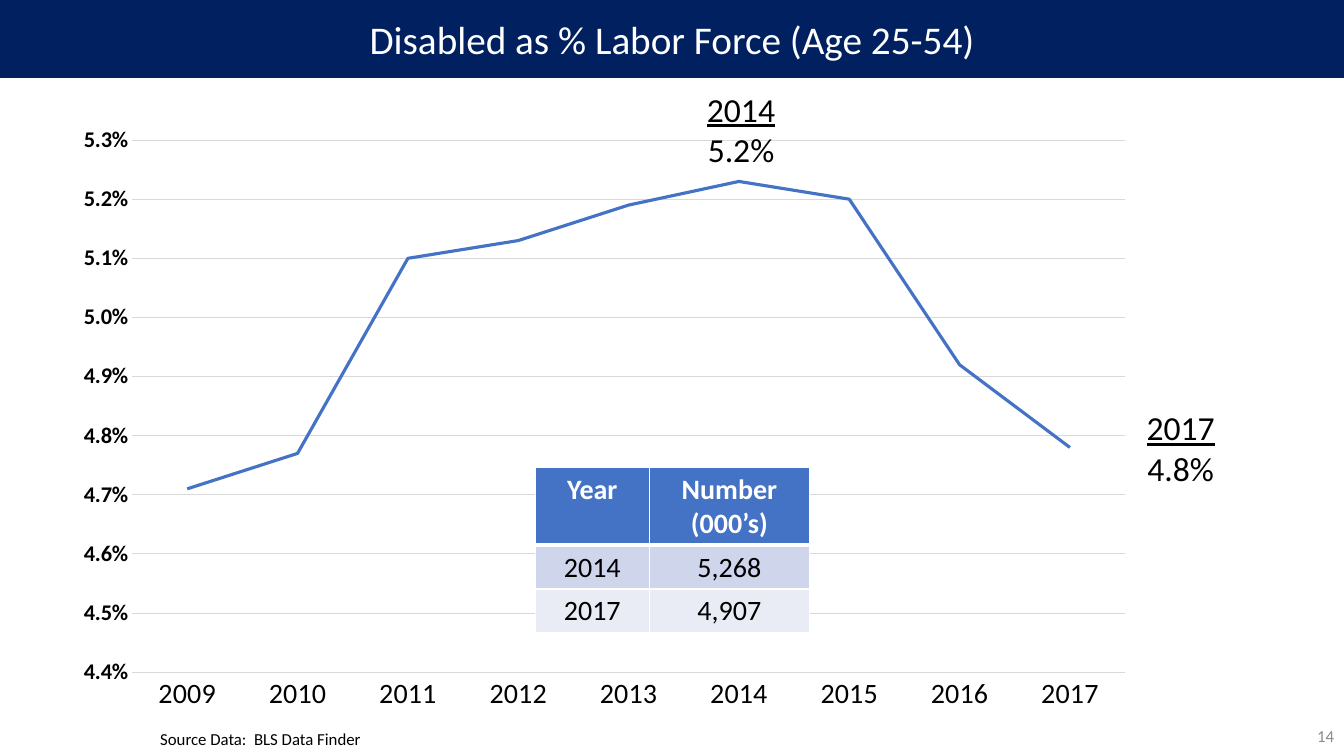
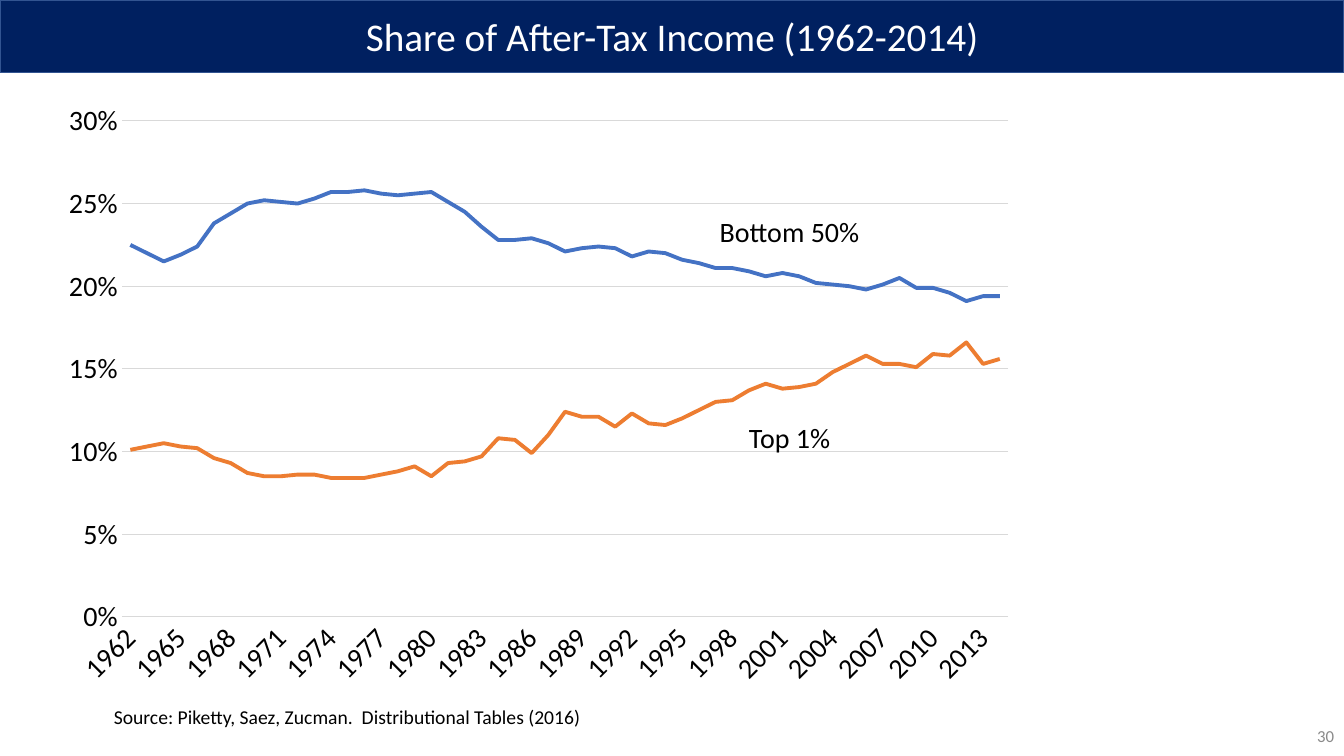
from dataclasses import dataclass

from lxml import etree
from pptx import Presentation
from pptx.chart.data import CategoryChartData
from pptx.dml.color import RGBColor
from pptx.enum.chart import XL_CHART_TYPE as ChartType, XL_TICK_MARK as Tick
from pptx.enum.shapes import MSO_SHAPE as Shape
from pptx.enum.text import MSO_ANCHOR as Anchor, PP_ALIGN as Align
from pptx.oxml import parse_xml
from pptx.oxml.ns import nsdecls, qn
from pptx.util import Inches, Pt


@dataclass(frozen=True)
class Theme:
    font: str = "Calibri"
    navy: str = "002060"
    band_edge: str = "325491"
    blue: str = "4472C4"
    orange: str = "ED7D31"
    grid: str = "D9D9D9"
    row_dark: str = "CFD5EA"
    row_light: str = "E9EBF5"
    white: str = "FFFFFF"
    black: str = "000000"
    page_grey: str = "8A8A8A"
    title: int = 28
    callout: int = 24
    body: int = 20
    value: int = 16
    source: int = 14
    small: int = 12


T = Theme()
SLIDE_W, SLIDE_H = 13.33, 7.5

DISABLED_YEARS = range(2009, 2018)
DISABLED = [0.0471, 0.0477, 0.051, 0.0513, 0.0519, 0.0523, 0.052, 0.0492, 0.0478]

INCOME_YEARS = range(1962, 2015)
BOTTOM_HALF = [
    0.225, 0.22, 0.215, 0.219, 0.224, 0.238, 0.244, 0.25, 0.252, 0.251, 0.25,
    0.253, 0.257, 0.257, 0.258, 0.256, 0.255, 0.256, 0.257, 0.251, 0.245, 0.236,
    0.228, 0.228, 0.229, 0.226, 0.221, 0.223, 0.224, 0.223, 0.218, 0.221, 0.22,
    0.216, 0.214, 0.211, 0.211, 0.209, 0.206, 0.208, 0.206, 0.202, 0.201, 0.2,
    0.198, 0.201, 0.205, 0.199, 0.199, 0.196, 0.191, 0.194, 0.194]
TOP_PERCENT = [
    0.101, 0.103, 0.105, 0.103, 0.102, 0.096, 0.093, 0.087, 0.085, 0.085, 0.086,
    0.086, 0.084, 0.084, 0.084, 0.086, 0.088, 0.091, 0.085, 0.093, 0.094, 0.097,
    0.108, 0.107, 0.099, 0.11, 0.124, 0.121, 0.121, 0.115, 0.123, 0.117, 0.116,
    0.12, 0.125, 0.13, 0.131, 0.137, 0.141, 0.138, 0.139, 0.141, 0.148, 0.153,
    0.158, 0.153, 0.153, 0.151, 0.159, 0.158, 0.166, 0.153, 0.156]


def rgb(color):
    return RGBColor.from_string(color)


def inches(box):
    return [Inches(v) for v in box]


def style_font(font, size, color=T.black, bold=False, underline=False):
    font.name, font.size, font.bold = T.font, Pt(size), bold
    font.color.rgb = rgb(color)
    if underline:
        font.underline = True


def write(tf, *lines, size, align=Align.LEFT, anchor=Anchor.TOP, wrap=False,
          color=T.black, bold=False, underline_first=False):
    """Fill a text frame with one paragraph per line."""
    tf.word_wrap, tf.vertical_anchor = wrap, anchor
    for i, line in enumerate(lines):
        p = tf.paragraphs[0] if i == 0 else tf.add_paragraph()
        p.alignment = align
        r = p.add_run()
        r.text = line
        style_font(r.font, size, color, bold, underline_first and i == 0)


def add_text(slide, box, *lines, **fmt):
    write(slide.shapes.add_textbox(*inches(box)).text_frame, *lines, **fmt)


def add_callout(slide, left, top, year, share):
    add_text(slide, (left, top, 1, 0.91), year, share, size=T.callout,
             align=Align.CENTER, underline_first=True)


def add_slide(prs, title, page, band_h, band_line):
    """Add a blank slide with the title band and the page number."""
    slide = prs.slides.add_slide(prs.slide_layouts[6])
    sp = slide.shapes.add_shape(Shape.RECTANGLE, *inches((0, 0, SLIDE_W, band_h)))
    sp.shadow.inherit = False
    sp.fill.solid()
    sp.fill.fore_color.rgb = rgb(T.navy)
    sp.line.color.rgb = rgb(band_line)
    sp.line.width = Pt(1)
    write(sp.text_frame, title, size=T.title, color=T.white,
          align=Align.CENTER, anchor=Anchor.MIDDLE, wrap=True)
    add_text(slide, (SLIDE_W - 3, SLIDE_H - 0.4, 3, 0.4), page, size=T.small,
             color=T.page_grey, align=Align.RIGHT, anchor=Anchor.MIDDLE, wrap=True)
    return slide


def set_plot_box(chart, box, plot):
    """Pin the inner plot area, given in slide inches, inside the chart box."""
    area = chart.element.find(".//" + qn("c:plotArea"))
    for old in area.findall(qn("c:layout")):
        area.remove(old)
    layout = etree.Element(qn("c:layout"))
    manual = etree.SubElement(layout, qn("c:manualLayout"))
    left, top, width, height = box
    settings = [("layoutTarget", "inner"), ("xMode", "edge"), ("yMode", "edge"),
                ("x", (plot[0] - left) / width), ("y", (plot[1] - top) / height),
                ("w", plot[2] / width), ("h", plot[3] / height)]
    for tag, val in settings:
        etree.SubElement(manual, qn("c:" + tag)).set("val", str(val))
    area.insert(0, layout)


def slant_labels(chart, skip):
    """Turn the category labels by 45 degrees and show one in every `skip`."""
    axis = chart.element.find(".//" + qn("c:catAx"))
    axis.find(qn("c:txPr")).find(qn("a:bodyPr")).set("rot", "-2700000")
    step = etree.Element(qn("c:tickLblSkip"))
    step.set("val", str(skip))
    axis.find(qn("c:noMultiLvlLbl")).addprevious(step)


def add_line_chart(slide, box, plot, years, series, scale, fmt,
                   value_size=T.body, value_bold=False, width=2.25):
    """Draw lines; series holds (name, values, colour), scale (min, max, step)."""
    data = CategoryChartData()
    data.categories = [str(y) for y in years]
    for name, values, _ in series:
        data.add_series(name, values)
    chart = slide.shapes.add_chart(ChartType.LINE, *inches(box), data).chart
    chart.has_legend = chart.has_title = False
    chart.font.name, chart.font.size = T.font, Pt(10)
    chart.plots[0].vary_by_categories = False
    for s, (_, _, color) in zip(chart.plots[0].series, series):
        s.smooth = False
        s.format.line.color.rgb = rgb(color)
        s.format.line.width = Pt(width)

    cat, val = chart.category_axis, chart.value_axis
    for axis in (cat, val):
        axis.major_tick_mark = axis.minor_tick_mark = Tick.NONE
    style_font(cat.tick_labels.font, T.body)
    style_font(val.tick_labels.font, value_size, bold=value_bold)
    val.minimum_scale, val.maximum_scale, val.major_unit = scale
    val.tick_labels.number_format = fmt
    val.tick_labels.number_format_is_linked = False
    val.format.line.fill.background()
    val.has_major_gridlines = True
    for line in (cat.format.line, val.major_gridlines.format.line):
        line.color.rgb = rgb(T.grid)
        line.width = Pt(0.75)
    set_plot_box(chart, box, plot)
    return chart


def style_cell(cell, fill, bottom):
    tc_pr = cell._tc.get_or_add_tcPr()
    for side, pts in (("L", 1), ("R", 1), ("T", 1), ("B", bottom)):
        tc_pr.append(parse_xml(
            f'<a:ln{side} {nsdecls("a")} w="{Pt(pts)}"><a:solidFill>'
            f'<a:srgbClr val="{T.white}"/></a:solidFill></a:ln{side}>'))
    cell.fill.solid()
    cell.fill.fore_color.rgb = rgb(fill)


def add_number_table(slide, left, top, rows, col_widths, row_heights):
    box = (left, top, sum(col_widths), sum(row_heights))
    table = slide.shapes.add_table(len(rows), len(col_widths), *inches(box)).table
    for col, w in zip(table.columns, col_widths):
        col.width = Inches(w)
    for i, (row, h) in enumerate(zip(rows, row_heights)):
        table.rows[i].height = Inches(h)
        head = i == 0
        fill = T.blue if head else (T.row_light, T.row_dark)[i % 2]
        for j, text in enumerate(row):
            cell = table.cell(i, j)
            style_cell(cell, fill, bottom=3 if head else 1)
            write(cell.text_frame, text, size=T.body, align=Align.CENTER, wrap=True,
                  color=T.white if head else T.black, bold=head)


def build_labor_slide(prs):
    slide = add_slide(prs, "Disabled as % Labor Force (Age 25-54)", "14", 0.77, T.navy)
    add_line_chart(slide, (0.61, 1.13, 10.76, 6.05), (1.31, 1.39, 9.85, 5.28),
                   DISABLED_YEARS, [("Disabled share", DISABLED, T.blue)],
                   (0.044, 0.053, 0.001), "0.0%", T.value, value_bold=True)
    add_callout(slide, 6.85, 0.83, "2014", "5.2%")
    add_callout(slide, 11.21, 3.99, "2017", "4.8%")
    add_number_table(slide, 5.31, 4.64,
                     [("Year", "Number (000’s)"), ("2014", "5,268"), ("2017", "4,907")],
                     (1.13, 1.59), (0.77, 0.43, 0.43))
    add_text(slide, (1.49, 7.18, 2.21, 0.3), "Source Data:  BLS Data Finder", size=T.small)


def build_income_slide(prs):
    slide = add_slide(prs, "Share of After-Tax Income (1962-2014)", "30", 0.72, T.band_edge)
    series = [("Bottom 50%", BOTTOM_HALF, T.blue), ("Top 1%", TOP_PERCENT, T.orange)]
    chart = add_line_chart(slide, (0.49, 0.91, 9.7, 6.02), (1.21, 1.2, 8.79, 4.92),
                           INCOME_YEARS, series, (0, 0.3, 0.05), "0%", width=2.75)
    slant_labels(chart, 3)
    add_text(slide, (7.04, 2.08, 1.6, 0.44), "Bottom 50%", size=T.body)
    add_text(slide, (7.33, 4.12, 1.01, 0.44), "Top 1%", size=T.body)
    add_text(slide, (1.03, 6.94, 4.88, 0.34),
             "Source: Piketty, Saez, Zucman.  Distributional Tables (2016)", size=T.source)


def main():
    prs = Presentation()
    prs.slide_width, prs.slide_height = Inches(SLIDE_W), Inches(SLIDE_H)
    build_labor_slide(prs)
    build_income_slide(prs)
    prs.save("out.pptx")


if __name__ == "__main__":
    main()
